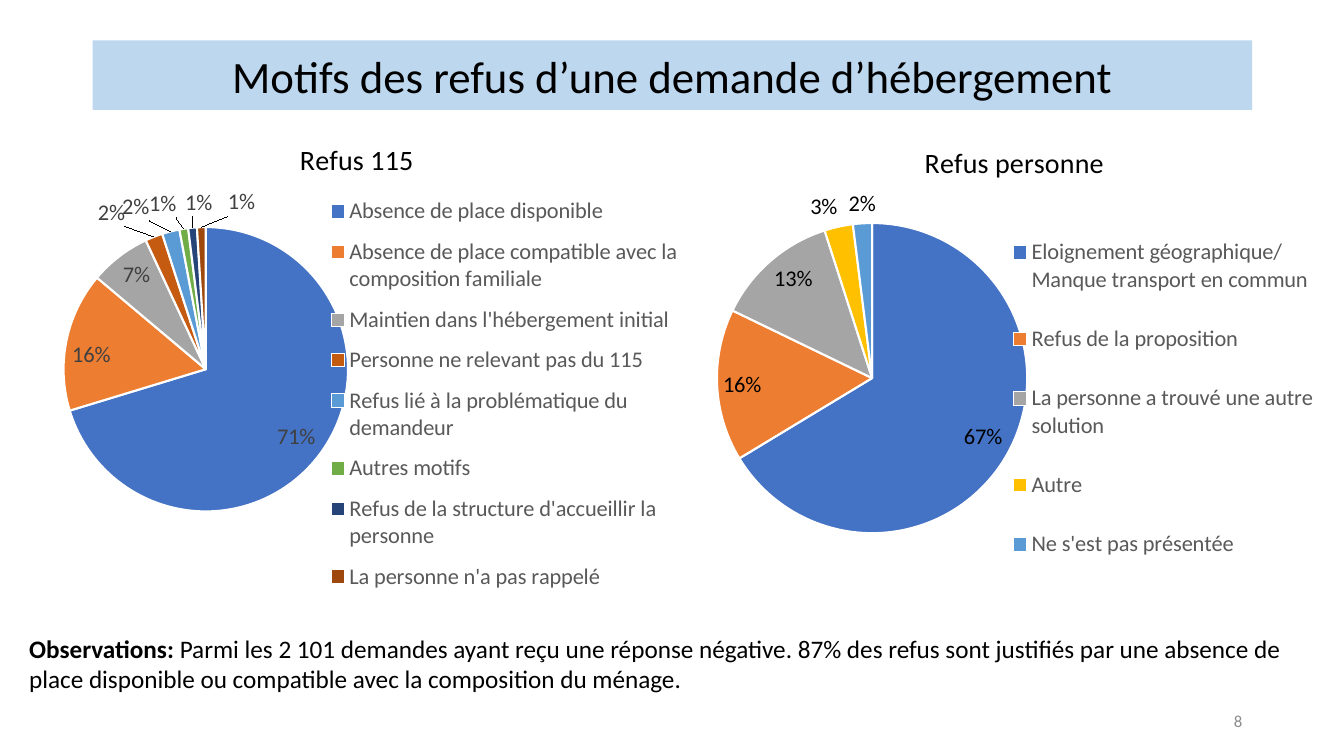
from pptx import Presentation
from pptx import util as u
from pptx.chart.data import CategoryChartData
from pptx.dml.color import RGBColor
from pptx.enum import chart as charts, shapes, text
from pptx.oxml import parse_xml
from pptx.oxml.ns import nsdecls

THEME = {
    "font": "Calibri",
    "black": "000000", "white": "FFFFFF", "band": "BDD7EE",
    "legend": "595959", "label": "404040", "number": "8C8C8C",
    "blue": "4472C4", "orange": "ED7D31", "grey": "A5A5A5", "rust": "C55A11",
    "sky": "5B9BD5", "green": "70AD47", "navy": "264478", "brown": "9E480E",
    "gold": "FFC000",
    "title": 32, "heading": 20, "body": 18, "small": 16, "footer": 12,
}
MARGIN = 0.19


def write(para, words, size="body", color="black", bold=False, align=None):
    span = para.add_run()
    span.text = words
    span.font.name = THEME["font"]
    span.font.size = u.Pt(THEME[size])
    span.font.bold = bold
    span.font.color.rgb = RGBColor.from_string(THEME[color])
    if align is not None:
        para.alignment = align


def place(parent, position, **shares):
    """Insert a manual chart layout at a child position, in shares of the chart."""
    inner = '<c:layoutTarget val="inner"/>' if parent.tag.endswith("plotArea") else ""
    modes = "" if parent.tag.endswith("dLbl") else '<c:xMode val="edge"/><c:yMode val="edge"/>'
    values = "".join(f'<c:{key} val="{share}"/>' for key, share in shares.items())
    for old in parent.findall("{*}layout"):
        parent.remove(old)
    parent.insert(position, parse_xml(
        f'<c:layout {nsdecls("c")}><c:manualLayout>{inner}{modes}{values}'
        "</c:manualLayout></c:layout>"))


deck = Presentation()
deck.slide_width, deck.slide_height = u.Inches(13.33), u.Inches(7.5)
page = deck.slides.add_slide(deck.slide_layouts[6])

band = page.shapes.add_shape(shapes.MSO_SHAPE.RECTANGLE, *map(u.Inches, (0.92, 0.4, 11.5, 0.69)))
band.shadow.inherit = False
band.fill.solid()
band.fill.fore_color.rgb = RGBColor.from_string(THEME["band"])
band.line.fill.background()
band.text_frame.vertical_anchor = text.MSO_ANCHOR.MIDDLE
write(band.text_frame.paragraphs[0], "Motifs des refus d’une demande d’hébergement",
      size="title", align=text.PP_ALIGN.CENTER)

pies = [
    {"title": "Refus 115", "box": (MARGIN, 1.09, 6.67, 4.95), "label": "label",
     "heading": {"x": 0.41, "y": 0.05},
     "plot": {"x": 0.05, "y": 0.235, "w": 0.455, "h": 0.57},
     "legend": {"x": 0.47, "y": 0.15, "w": 0.52, "h": 0.84},
     "shifts": {3: -0.04, 4: -0.03, 5: -0.01, 6: 0.03, 7: 0.06},
     "slices": [("Absence de place disponible", 71, "blue"),
                ("Absence de place compatible avec la composition familiale", 16, "orange"),
                ("Maintien dans l'hébergement initial", 7, "grey"),
                ("Personne ne relevant pas du 115", 2, "rust"),
                ("Refus lié à la problématique du demandeur", 2, "sky"),
                ("Autres motifs", 1, "green"),
                ("Refus de la structure d'accueillir la personne", 1, "navy"),
                ("La personne n'a pas rappelé", 1, "brown")]},
    {"title": "Refus personne", "box": (6.86, 1.09, 6.28, 5.07), "label": "black",
     "heading": {"x": 0.36, "y": 0.055},
     "plot": {"x": 0.04, "y": 0.22, "w": 0.49, "h": 0.61},
     "legend": {"x": 0.5, "y": 0.19, "w": 0.49, "h": 0.75},
     "shifts": {},
     "slices": [("Eloignement géographique/ Manque transport en commun", 67, "blue"),
                ("Refus de la proposition", 16, "orange"),
                ("La personne a trouvé une autre solution", 13, "grey"),
                ("Autre", 3, "gold"),
                ("Ne s'est pas présentée", 2, "sky")]},
]
for pie in pies:
    names, shares, colors = zip(*pie["slices"])
    data = CategoryChartData(number_format='0"%"')
    data.categories = names
    data.add_series(pie["title"], shares)
    chart = page.shapes.add_chart(charts.XL_CHART_TYPE.PIE, *map(u.Inches, pie["box"]), data).chart
    chart.font.name = THEME["font"]
    chart.font.size = u.Pt(THEME["small"])
    chart.has_title = True
    write(chart.chart_title.text_frame.paragraphs[0], pie["title"], size="heading")
    place(chart.chart_title._element, 1, **pie["heading"])

    chart.has_legend = True
    legend = chart.legend
    legend.position = charts.XL_LEGEND_POSITION.BOTTOM
    legend.include_in_layout = False
    legend.font.name = THEME["font"]
    legend.font.size = u.Pt(THEME["small"])
    legend.font.color.rgb = RGBColor.from_string(THEME["legend"])
    place(legend._element, 1, **pie["legend"])

    plot = chart.plots[0]
    plot.vary_by_categories = True
    place(plot._element.getparent(), 0, **pie["plot"])
    for index, (share, color) in enumerate(zip(shares, colors)):
        point = plot.series[0].points[index]
        point.format.fill.solid()
        point.format.fill.fore_color.rgb = RGBColor.from_string(THEME[color])
        point.format.line.color.rgb = RGBColor.from_string(THEME["white"])
        point.format.line.width = u.Pt(1.5)
        label = point.data_label
        label.font.name = THEME["font"]
        label.font.size = u.Pt(THEME["small"])
        label.font.color.rgb = RGBColor.from_string(THEME[pie["label"]])
        sides = charts.XL_LABEL_POSITION
        label.position = sides.INSIDE_END if share > 5 else sides.OUTSIDE_END
        if index in pie["shifts"]:
            entry = plot.series[0].data_labels._element.findall("{*}dLbl")[index]
            place(entry, 1, x=pie["shifts"][index], y=-0.01)

number = page.shapes.add_textbox(*map(u.Inches, (9.42, 6.95, 3, 0.4))).text_frame
number.vertical_anchor = text.MSO_ANCHOR.MIDDLE
write(number.paragraphs[0], "8", size="footer", color="number", align=text.PP_ALIGN.RIGHT)

notes = page.shapes.add_textbox(*map(u.Inches, (MARGIN, 6.23, 12.95, 0.71))).text_frame
notes.word_wrap = True
para = notes.paragraphs[0]
write(para, "Observations: ", bold=True)
write(para, "Parmi les 2 101 demandes ayant reçu une réponse négative. 87% des refus sont "
            "justifiés par une absence de place disponible ou compatible avec la "
            "composition du ménage.")

deck.save("out.pptx")
